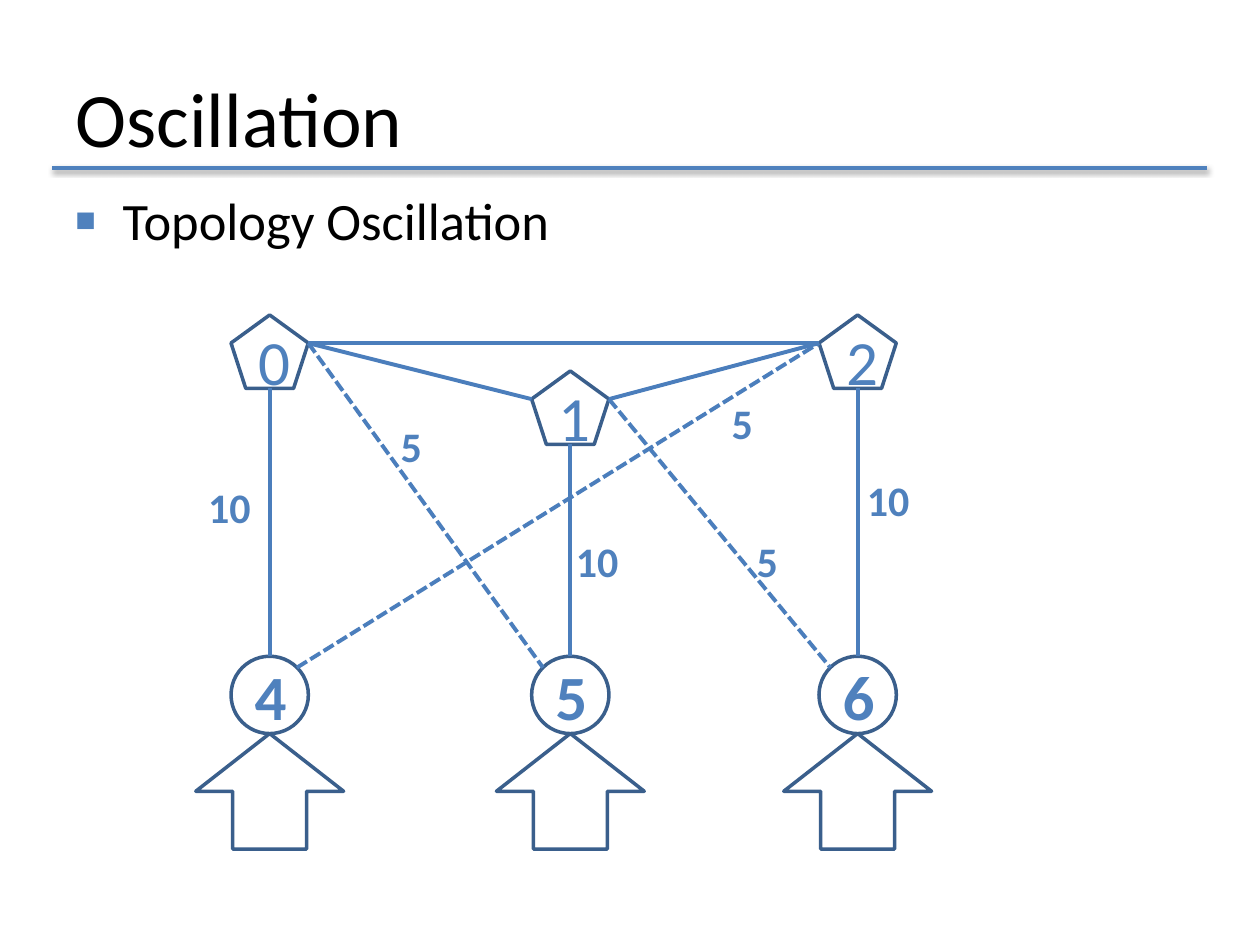
from lxml import etree
from pptx import Presentation
from pptx import util as u
from pptx.dml.color import RGBColor
from pptx.enum import dml, shapes, text
from pptx.oxml import ns

FONT = "Calibri"
BLACK, WHITE = "000000", "FFFFFF"
BLUE, EDGE, LINK = "4F81BD", "3A5F8C", "4B7EBC"


def color(value):
    return RGBColor.from_string(value)


def add_xml(parent, tag, **attributes):
    return etree.SubElement(parent, ns.qn(tag), attributes)


def write(frame, words, size=24, ink=BLUE, bold=False,
          align=text.PP_ALIGN.LEFT, anchor=text.MSO_ANCHOR.TOP):
    frame.word_wrap = True
    frame.vertical_anchor = anchor
    para = frame.paragraphs[0]
    para.alignment = align
    span = para.add_run()
    span.text = words
    span.font.name, span.font.size, span.font.bold = FONT, u.Pt(size), bold
    span.font.color.rgb = color(ink)
    return para


class Sketch:
    """Holds the style and the current slide; lengths are in points."""

    def __init__(self, deck):
        self.page = deck.slides.add_slide(deck.slide_layouts[5])

    def title(self, words, left, top, width, height):
        box = self.page.shapes.title
        box.left, box.top, box.width, box.height = map(
            u.Pt, (left, top, width, height))
        write(box.text_frame, words, size=44, ink=BLACK,
              anchor=text.MSO_ANCHOR.MIDDLE)

    def label(self, words, left, top, width=42.5, height=36, **style):
        box = self.page.shapes.add_textbox(
            *map(u.Pt, (left, top, width, height)))
        return write(box.text_frame, words, **style)

    def bullet(self, words, left, top, width, height):
        para = self.label(words, left, top, width, height, size=30, ink=BLACK)
        para.space_before = u.Pt(6)
        props = para._p.get_or_add_pPr()
        props.set("marL", str(u.Pt(27)))
        props.set("indent", str(u.Pt(-27)))
        add_xml(add_xml(props, "a:buClr"), "a:srgbClr", val=BLUE)
        add_xml(props, "a:buSzPct", val="65000")
        add_xml(props, "a:buFont", typeface="Arial")
        add_xml(props, "a:buChar", char="■")

    def shape(self, kind, center, top, width, height, words="", bold=False):
        box = self.page.shapes.add_shape(
            kind, *map(u.Pt, (center - width / 2, top, width, height)))
        box.shadow.inherit = False
        box.fill.solid()
        box.fill.fore_color.rgb = color(WHITE)
        box.line.color.rgb = color(EDGE)
        box.line.width = u.Pt(2)
        if words:
            write(box.text_frame, words, size=36, bold=bold,
                  align=text.PP_ALIGN.CENTER, anchor=text.MSO_ANCHOR.MIDDLE)
        return box

    def line(self, start, end, ink=LINK, weight=2.25, dashed=False,
             shadow=False):
        link = self.page.shapes.add_connector(
            shapes.MSO_CONNECTOR.STRAIGHT, *map(u.Pt, (*start, *end)))
        link.line.color.rgb = color(ink)
        link.line.width = u.Pt(weight)
        if dashed:
            link.line.dash_style = dml.MSO_LINE.SQUARE_DOT
            dash = link.line._ln.find(ns.qn("a:prstDash"))
            dash.set("val", "sysDash")
        effects = add_xml(link._element.spPr, "a:effectLst")
        if shadow:
            cast = add_xml(effects, "a:outerShdw", blurRad=str(u.Pt(3.1)),
                           dist=str(u.Pt(1.6)), dir="5400000",
                           rotWithShape="0")
            shade = add_xml(cast, "a:srgbClr", val=BLACK)
            add_xml(shade, "a:alpha", val="38000")
        return link


def main():
    deck = Presentation()
    deck.slide_width, deck.slide_height = u.Pt(720), u.Pt(540)
    sketch = Sketch(deck)

    # Heading
    sketch.title("Oscillation", 36, 21.6, 648, 90)
    sketch.line((30, 96), (690, 96), ink=BLUE, weight=2, shadow=True)
    sketch.bullet("Topology Oscillation", 36, 103.7, 342, 58)

    # Columns: pentagon above, circle below, arrow into the circle
    node, pentagon_height, corner_drop = 44.2, 42, 16.1
    circle_top, diagonal = 375, 15.6
    kinds = shapes.MSO_SHAPE
    left_corner, right_corner, circle_left, circle_right = [], [], [], []
    columns = [(154.1, 180, "0", "4"), (325.9, 212, "1", "5"),
               (490.1, 180, "2", "6")]
    for center, top, upper, lower in columns:
        sketch.shape(kinds.REGULAR_PENTAGON, center, top, node,
                     pentagon_height, upper)
        circle = sketch.shape(kinds.OVAL, center, circle_top, node, node,
                              lower, bold=True)
        sketch.shape(kinds.UP_ARROW, center, circle_top + node, 84.5, 66)
        stem = sketch.line((center, top + pentagon_height),
                           (center, circle_top))
        stem.end_connect(circle, 0)
        corner_y = top + corner_drop
        left_corner.append((center - node / 2, corner_y))
        right_corner.append((center + node / 2, corner_y))
        diagonal_y = circle_top + node / 2 - diagonal
        circle_left.append((center - diagonal, diagonal_y))
        circle_right.append((center + diagonal, diagonal_y))

    # Links among the pentagons
    for first, second in [(0, 2), (0, 1), (1, 2)]:
        sketch.line(right_corner[first], left_corner[second])

    # Dashed links from pentagons to circles
    for start, end in [(right_corner[0], circle_left[1]),
                       (circle_right[0], left_corner[2]),
                       (right_corner[1], circle_left[2])]:
        sketch.line(start, end, dashed=True)

    # Link weights
    for words, left, top in [("10", 111.8, 271.5), ("5", 221.8, 236.8),
                             ("10", 322, 302.5), ("10", 488.2, 267.8),
                             ("5", 411, 223.8), ("5", 425.3, 302.5)]:
        sketch.label(words, left, top, bold=True)

    deck.save("out.pptx")


if __name__ == "__main__":
    main()
